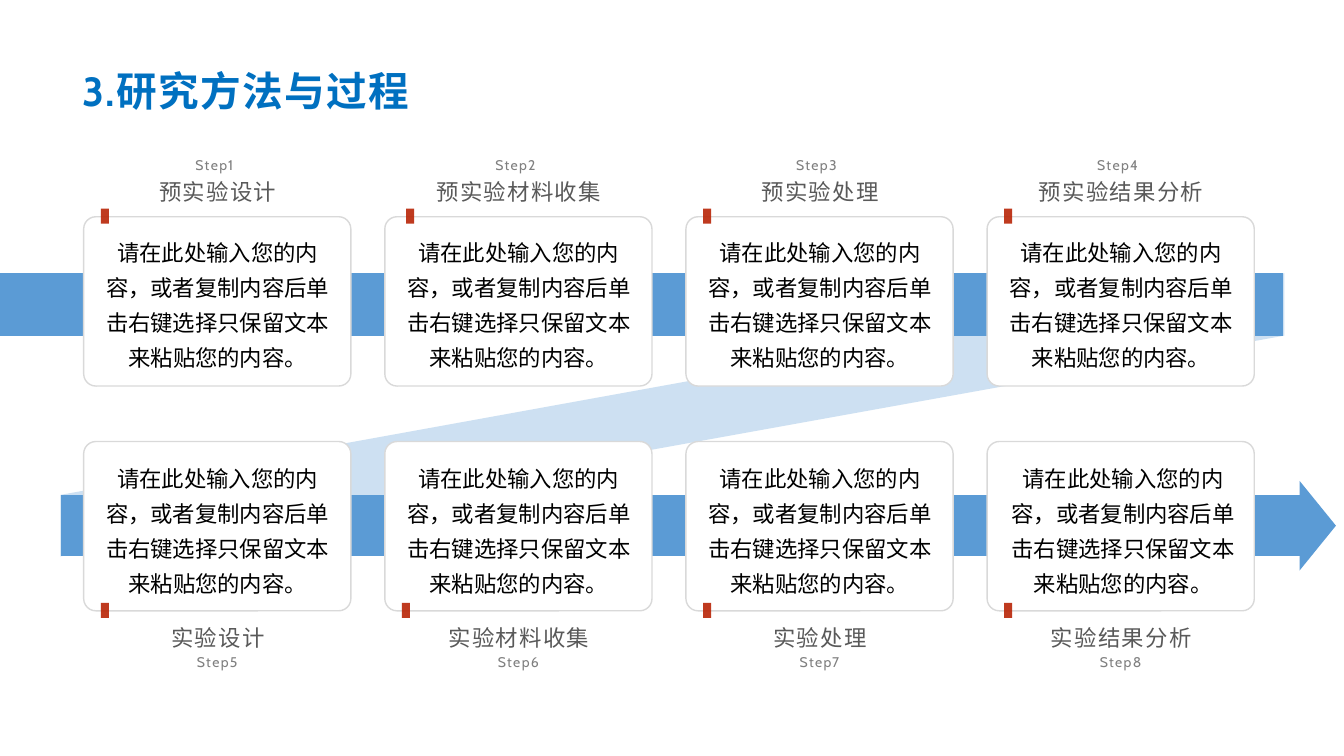
import pptx
import pptx.dml.color
import pptx.enum.shapes
import pptx.enum.text
import pptx.oxml
import pptx.oxml.ns
import pptx.util

Inches = pptx.util.Inches
Shapes = pptx.enum.shapes.MSO_SHAPE
Align = pptx.enum.text.PP_ALIGN
Anchor = pptx.enum.text.MSO_ANCHOR


def colour(value):
    return pptx.dml.color.RGBColor.from_string(value)


def write(box, text, look):
    frame = box.text_frame
    for name, value in look["frame"].items():
        setattr(frame, name, value)
    for side in ("left", "right", "top", "bottom"):
        setattr(frame, f"margin_{side}", Inches(look["inset"]))
    para = frame.paragraphs[0]
    for name, value in look["para"].items():
        setattr(para, name, value)
    para._p.get_or_add_pPr().set("hangingPunct", "0")
    span = para.add_run()
    span.text = text
    for name, value in look["font"].items():
        setattr(span.font, name, value)
    span.font.color.rgb = colour(look["colour"])
    properties = span.font._element
    properties.set("lang", "zh-CN")
    properties.set("spc", str(look["spacing"]))
    east = pptx.oxml.ns.qn("a:ea")
    properties.find(pptx.oxml.ns.qn("a:latin")).addnext(
        properties.makeelement(east, {"typeface": "Cabin"}))


top_frame = {"word_wrap": True, "vertical_anchor": Anchor.TOP,
             "auto_size": pptx.enum.text.MSO_AUTO_SIZE.NONE}
middle_frame = {**top_frame, "vertical_anchor": Anchor.MIDDLE}
centred = {"alignment": Align.CENTER, "line_spacing": 0.9}
title_look = {
    "frame": top_frame, "inset": 0.05, "colour": "0070C0", "spacing": 100,
    "para": {"alignment": Align.LEFT, "line_spacing": 0.9},
    "font": {"name": "Cabin", "size": pptx.util.Pt(29), "bold": True},
}
body_look = {
    "frame": middle_frame, "inset": 0.06, "colour": "000000", "spacing": 0,
    "para": {"alignment": Align.CENTER, "line_spacing": 1.3},
    "font": {"name": "Noto Sans CJK JP", "size": pptx.util.Pt(16)},
}
heading_look = {
    "frame": top_frame, "inset": 0, "colour": "595959", "spacing": 100,
    "para": centred,
    "font": {"name": "Cabin", "size": pptx.util.Pt(16)},
}
step_look = {
    "frame": top_frame, "inset": 0, "colour": "808080", "spacing": 100,
    "para": centred,
    "font": {"name": "Cabin", "size": pptx.util.Pt(10)},
}

deck = pptx.Presentation()
deck.slide_width = Inches(13.33)
deck.slide_height = Inches(7.5)
page = deck.slides.add_slide(deck.slide_layouts[5])
shapes = page.shapes

title = shapes.title
title_place = {"left": 0.77, "top": 0.66, "width": 9.04, "height": 0.46}
for name, value in title_place.items():
    setattr(title, name, Inches(value))
write(title, "3.研究方法与过程", title_look)

arrow = shapes.add_shape(Shapes.RIGHT_ARROW, Inches(12.37), Inches(4.77),
                         Inches(0.88), Inches(0.89))
arrow.adjustments[0] = 0.5
arrow.adjustments[1] = 0.41
painted = [(arrow, "5B9BD5", 100)]

bands = [
    ([(0.61, 4.91), (12.92, 4.91), (12.92, 5.52), (0.61, 5.52)], 100),
    ([(12.74, 2.71), (12.74, 3.33), (0.6, 5.52), (0.6, 4.91)], 30),
    ([(0, 2.71), (12.73, 2.71), (12.73, 3.33), (0, 3.33)], 100),
]
for corners, opacity in bands:
    points = [(Inches(x), Inches(y)) for x, y in corners]
    builder = shapes.build_freeform(*points[0])
    builder.add_line_segments(points[1:], close=True)
    painted.append((builder.convert_to_shape(), "5B9BD5", opacity))

body = "请在此处输入您的内容，或者复制内容后单击右键选择只保留文本来粘贴您的内容。"
rows = [
    {"headings": ["预实验设计", "预实验材料收集", "预实验处理", "预实验结果分析"],
     "card": 2.15, "body": 2.24, "marker": 2.07, "heading": 1.8, "step": 1.57,
     "step_shift": 1.02, "marker_shifts": [0.17, 0.21, 0.17, 0.17]},
    {"headings": ["实验设计", "实验材料收集", "实验处理", "实验结果分析"],
     "card": 4.38, "body": 4.48, "marker": 5.98, "heading": 6.22, "step": 6.5,
     "step_shift": 1.05, "marker_shifts": [0.17] * 4},
]
number = 0
for row in rows:
    for column, heading in enumerate(row["headings"]):
        number += 1
        left = 0.83 + 8.96 / 3 * column
        card = shapes.add_shape(Shapes.ROUNDED_RECTANGLE, Inches(left),
                                Inches(row["card"]), Inches(2.65), Inches(1.68))
        card.adjustments[0] = 0.072
        marker = shapes.add_shape(
            Shapes.RECTANGLE, Inches(left + row["marker_shifts"][column]),
            Inches(row["marker"]), Inches(0.08), Inches(0.15))
        painted += [(card, "FFFFFF", 100), (marker, "B92507", 90)]
        body_shift = 0.13 if number == 8 else 0.11
        labels = [
            (body, body_shift, row["body"], 2.44, 1.49, body_look),
            (heading, 0.27, row["heading"], 2.12, 0.35, heading_look),
            (f"Step{number}", row["step_shift"], row["step"], 0.55, 0.19, step_look),
        ]
        for text, shift, top, width, height, look in labels:
            box = shapes.add_textbox(Inches(left + shift), Inches(top),
                                     Inches(width), Inches(height))
            write(box, text, look)

for shape, value, opacity in painted:
    shape.shadow.inherit = False
    shape.fill.solid()
    shape.fill.fore_color.rgb = colour(value)
    if value == "FFFFFF":
        shape.line.color.rgb = colour("D9D9D9")
        shape.line.width = pptx.util.Pt(1)
    else:
        shape.line.fill.background()
    if opacity < 100:
        tint = shape._element.spPr.find(".//" + pptx.oxml.ns.qn("a:srgbClr"))
        alpha = tint.makeelement(pptx.oxml.ns.qn("a:alpha"),
                                 {"val": str(opacity * 1000)})
        tint.append(alpha)

deck.save("out.pptx")
